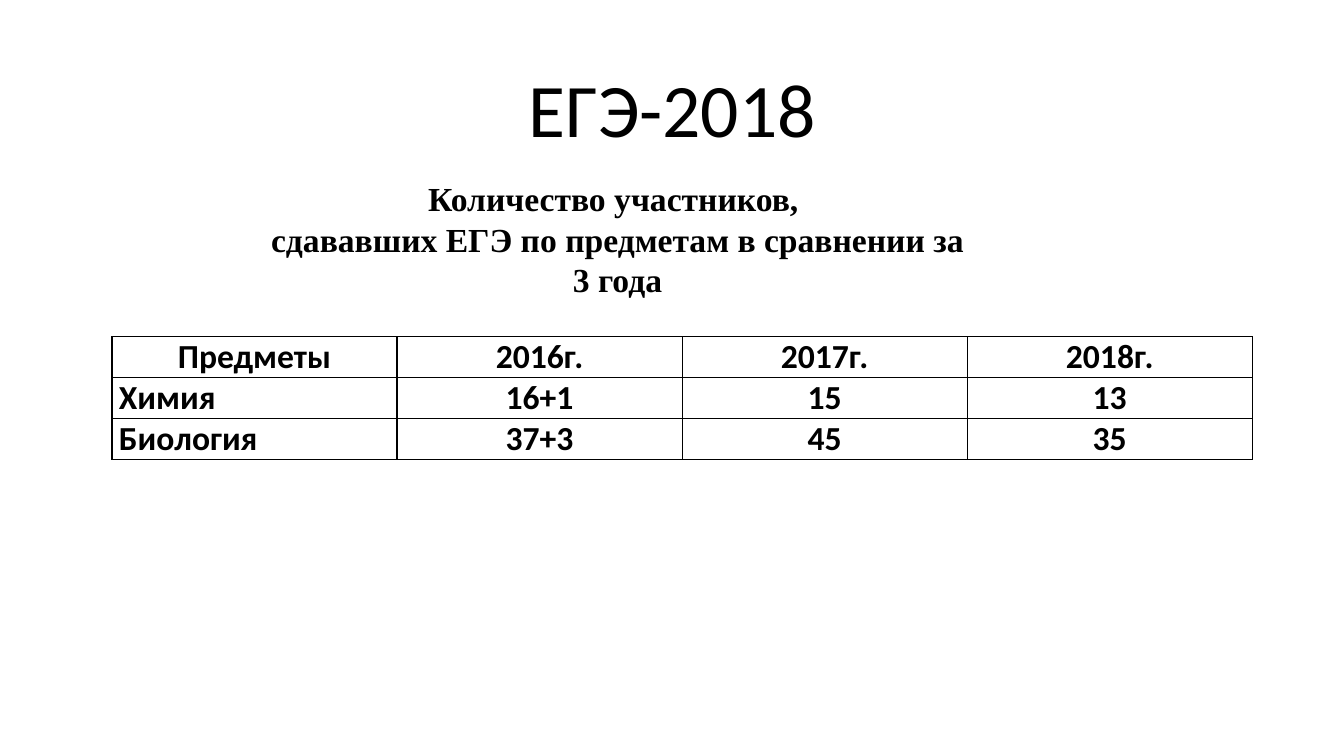
import dataclasses

import pptx
import pptx.dml.color
import pptx.enum.text
import pptx.oxml
import pptx.oxml.ns
import pptx.util

WIDTH = pptx.util.Inches(13.33)
HEIGHT = pptx.util.Inches(7.5)
COLORS = {"text": "000000", "border": "000000", "background": "FFFFFF"}
ALIGN = pptx.enum.text.PP_ALIGN
ANCHOR = pptx.enum.text.MSO_ANCHOR


@dataclasses.dataclass(frozen=True)
class Box:
    x: float
    y: float
    w: float
    h: float

    def emu(self) -> tuple[int, int, int, int]:
        return (round(self.x * WIDTH), round(self.y * HEIGHT),
                round(self.w * WIDTH), round(self.h * HEIGHT))


@dataclasses.dataclass(frozen=True)
class Style:
    size: float
    font: str = "Calibri"
    bold: bool = False


@dataclasses.dataclass(frozen=True)
class SubjectRow:
    subject: str
    counts: tuple[str, str, str]
    subject_align: ALIGN = ALIGN.LEFT


TITLE_BOX = Box(0.069, 0.0533, 0.8627, 0.1933)
CAPTION_BOX = Box(0.189, 0.2293, 0.5409, 0.1747)
TABLE_BOX = Box(0.0833, 0.4453, 0.8485, 0.16)
TITLE_STYLE = Style(54)
CAPTION_STYLE = Style(24, "Times New Roman", True)
CELL_STYLE = Style(24, bold=True)
ROWS = [
    SubjectRow("Предметы", ("2016г.", "2017г.", "2018г."), ALIGN.CENTER),
    SubjectRow("Химия", ("16+1", "15", "13")),
    SubjectRow("Биология", ("37+3", "45", "35")),
]


def write(tf, text: str, style: Style, align: ALIGN = ALIGN.CENTER) -> None:
    tf.text = text
    tf.word_wrap = True
    for p in tf.paragraphs:
        p.alignment = align
        for r in p.runs:
            r.font.size = pptx.util.Pt(style.size)
            r.font.name = style.font
            r.font.bold = style.bold
            r.font.color.rgb = pptx.dml.color.RGBColor.from_string(COLORS["text"])


def add_borders(cell) -> None:
    tcPr = cell._tc.get_or_add_tcPr()
    for i, side in enumerate("LRTB"):
        ln = pptx.oxml.parse_xml(
            f'<a:ln{side} {pptx.oxml.ns.nsdecls("a")} w="12700"><a:solidFill>'
            f'<a:srgbClr val="{COLORS["border"]}"/></a:solidFill></a:ln{side}>')
        tcPr.insert(i, ln)


def add_title(s) -> None:
    sp = s.shapes.title
    sp.left, sp.top, sp.width, sp.height = TITLE_BOX.emu()
    write(sp.text_frame, "ЕГЭ-2018", TITLE_STYLE)
    sp.text_frame.vertical_anchor = ANCHOR.MIDDLE
    sp.text_frame.paragraphs[0].line_spacing = 0.9


def add_subject_table(s) -> None:
    columns = 1 + len(ROWS[0].counts)
    tbl = s.shapes.add_table(len(ROWS), columns, *TABLE_BOX.emu()).table
    tbl.first_row = tbl.horz_banding = False
    for i, row in enumerate(ROWS):
        for j, text in enumerate((row.subject, *row.counts)):
            cell = tbl.cell(i, j)
            cell.margin_left = cell.margin_right = pptx.util.Inches(0.07)
            cell.margin_top = cell.margin_bottom = 0
            cell.fill.background()
            add_borders(cell)
            align = ALIGN.CENTER if j else row.subject_align
            write(cell.text_frame, text, CELL_STYLE, align)


def add_caption(s) -> None:
    tf = s.shapes.add_textbox(*CAPTION_BOX.emu()).text_frame
    write(tf, "Количество участников, \vсдававших ЕГЭ по предметам в сравнении за 3 года",
          CAPTION_STYLE)
    tf.auto_size = pptx.enum.text.MSO_AUTO_SIZE.SHAPE_TO_FIT_TEXT


def main() -> None:
    prs = pptx.Presentation()
    prs.slide_width, prs.slide_height = WIDTH, HEIGHT
    s = prs.slides.add_slide(prs.slide_layouts[5])
    s.background.fill.solid()
    s.background.fill.fore_color.rgb = pptx.dml.color.RGBColor.from_string(COLORS["background"])
    add_title(s)
    add_subject_table(s)
    add_caption(s)
    prs.save("out.pptx")


if __name__ == "__main__":
    main()
